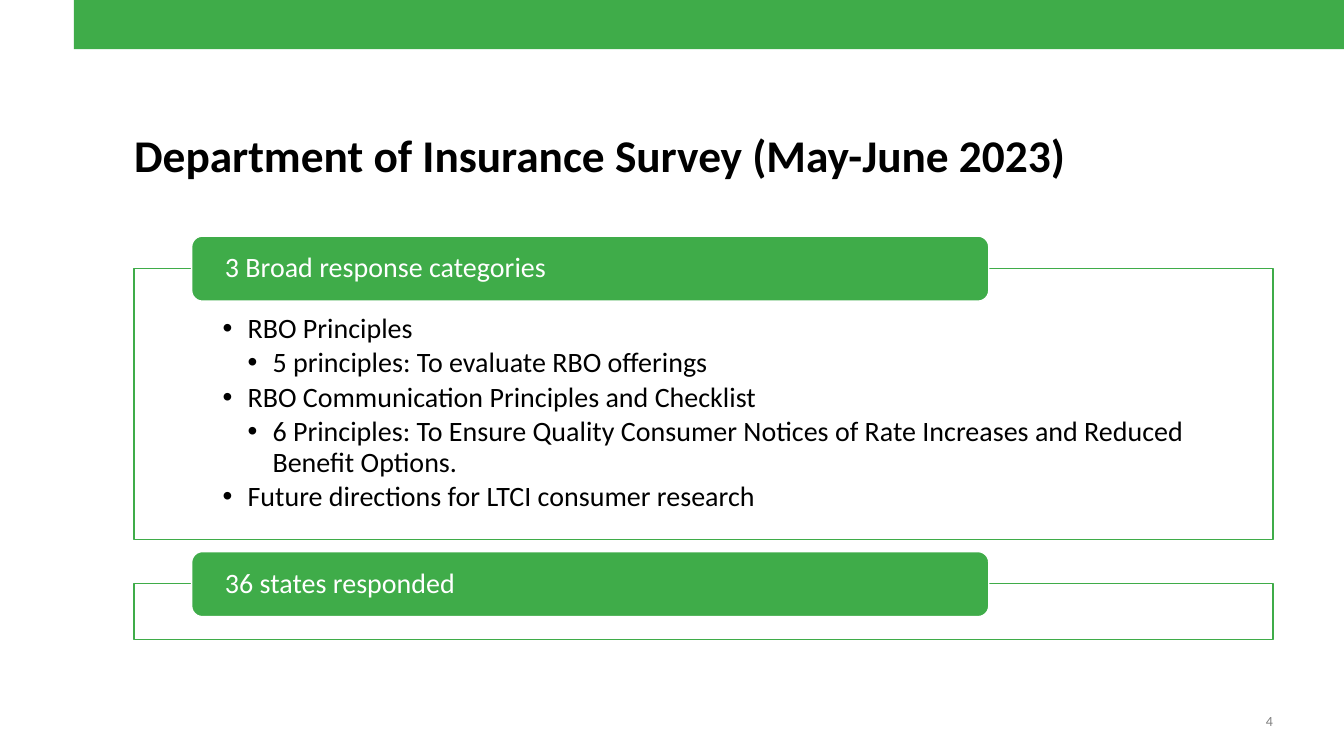
from lxml.etree import SubElement
from pptx import Presentation
from pptx.dml.color import RGBColor
from pptx.enum.shapes import MSO_SHAPE as SHAPE
from pptx.enum.text import MSO_ANCHOR as ANCHOR, PP_ALIGN as ALIGN
from pptx.oxml.ns import qn
from pptx.util import Cm, Pt

TITLE = "Department of Insurance Survey (May-June 2023)"
PAGE = "4"
# Panels: top and height in cm, heading, bullets as (level, text)
PANELS = [
    (6.76, 6.83, "3 Broad response categories", [
        (0, "RBO Principles"),
        (1, "5 principles: To evaluate RBO offerings"),
        (0, "RBO Communication Principles and Checklist"),
        (1, "6 Principles: To Ensure Quality Consumer Notices of Rate "
            "Increases and Reduced Benefit Options."),
        (0, "Future directions for LTCI consumer research"),
    ]),
    (14.71, 1.4, "36 states responded", []),
]

GREEN = RGBColor(0x3F, 0xAC, 0x49)
WHITE = RGBColor(0xFF, 0xFF, 0xFF)
BLACK = RGBColor(0, 0, 0)
GRAY = RGBColor(0x80, 0x80, 0x80)
FONT = "Calibri"
LEFT, WIDTH = 3.38, 28.7
TAB_INDENT, TAB_RISE, TAB_WIDTH, TAB_HEIGHT = 1.45, 0.81, 20.09, 1.64
BULLET_STEP = 0.63


def add_box(slide, kind, x, y, w, h, fill, line=None):
    sp = slide.shapes.add_shape(kind, Cm(x), Cm(y), Cm(w), Cm(h))
    sp.shadow.inherit = False
    sp.fill.solid()
    sp.fill.fore_color.rgb = fill
    if line is None:
        sp.line.fill.background()
    else:
        sp.line.color.rgb = line
        sp.line.width = Pt(1)
    return sp


def set_frame(tf, anchor, left=0, top=0, right=0, bottom=0):
    tf.word_wrap = True
    tf.vertical_anchor = anchor
    tf.margin_left, tf.margin_top = Cm(left), Cm(top)
    tf.margin_right, tf.margin_bottom = Cm(right), Cm(bottom)


def write(p, text, size, color, bold=False, align=ALIGN.LEFT, after=0):
    p.alignment = align
    p.line_spacing = 0.9
    p.space_before = Pt(0)
    p.space_after = Pt(after)
    r = p.add_run()
    r.text = text
    r.font.name = FONT
    r.font.size = Pt(size)
    r.font.bold = bold
    r.font.color.rgb = color


def add_bullet(p, level):
    p.level = level
    pPr = p._p.get_or_add_pPr()
    pPr.set("marL", str(Cm(BULLET_STEP * (level + 1))))
    pPr.set("indent", str(-Cm(BULLET_STEP)))
    SubElement(pPr, qn("a:buFont"), typeface="Arial")
    SubElement(pPr, qn("a:buChar"), char="•")


def add_panel(slide, top, height, heading, bullets):
    panel = add_box(slide, SHAPE.RECTANGLE, LEFT, top, WIDTH, height, WHITE, GREEN)
    color = panel._element.spPr.find(qn("a:solidFill"))[0]
    SubElement(color, qn("a:alpha"), val="90000")
    tf = panel.text_frame
    set_frame(tf, ANCHOR.TOP, 2.23, 1.16, 2.23, 0.41)
    for i, (level, text) in enumerate(bullets):
        p = tf.add_paragraph() if i else tf.paragraphs[0]
        add_bullet(p, level)
        write(p, text, 20, BLACK, after=3)

    tab = add_box(slide, SHAPE.ROUNDED_RECTANGLE, LEFT + TAB_INDENT, top - TAB_RISE,
                  TAB_WIDTH, TAB_HEIGHT, GREEN, WHITE)
    set_frame(tab.text_frame, ANCHOR.MIDDLE, left=0.76, right=0.76)
    write(tab.text_frame.paragraphs[0], heading, 20, WHITE)


def main():
    prs = Presentation()
    prs.slide_width, prs.slide_height = Cm(33.87), Cm(19.05)
    slide = prs.slides.add_slide(prs.slide_layouts[5])

    add_box(slide, SHAPE.RECTANGLE, 1.86, 0, 32.01, 1.24, GREEN)

    title = slide.shapes.title
    title.left, title.top = Cm(LEFT), Cm(3.1)
    title.width, title.height = Cm(WIDTH), Cm(1.5)
    set_frame(title.text_frame, ANCHOR.BOTTOM)
    write(title.text_frame.paragraphs[0], TITLE, 32.4, BLACK, bold=True)

    for panel in PANELS:
        add_panel(slide, *panel)

    number = slide.shapes.add_textbox(Cm(31.14), Cm(17.88), Cm(0.94), Cm(0.51))
    set_frame(number.text_frame, ANCHOR.BOTTOM)
    write(number.text_frame.paragraphs[0], PAGE, 10, GRAY, align=ALIGN.RIGHT)

    prs.save("out.pptx")


if __name__ == "__main__":
    main()
